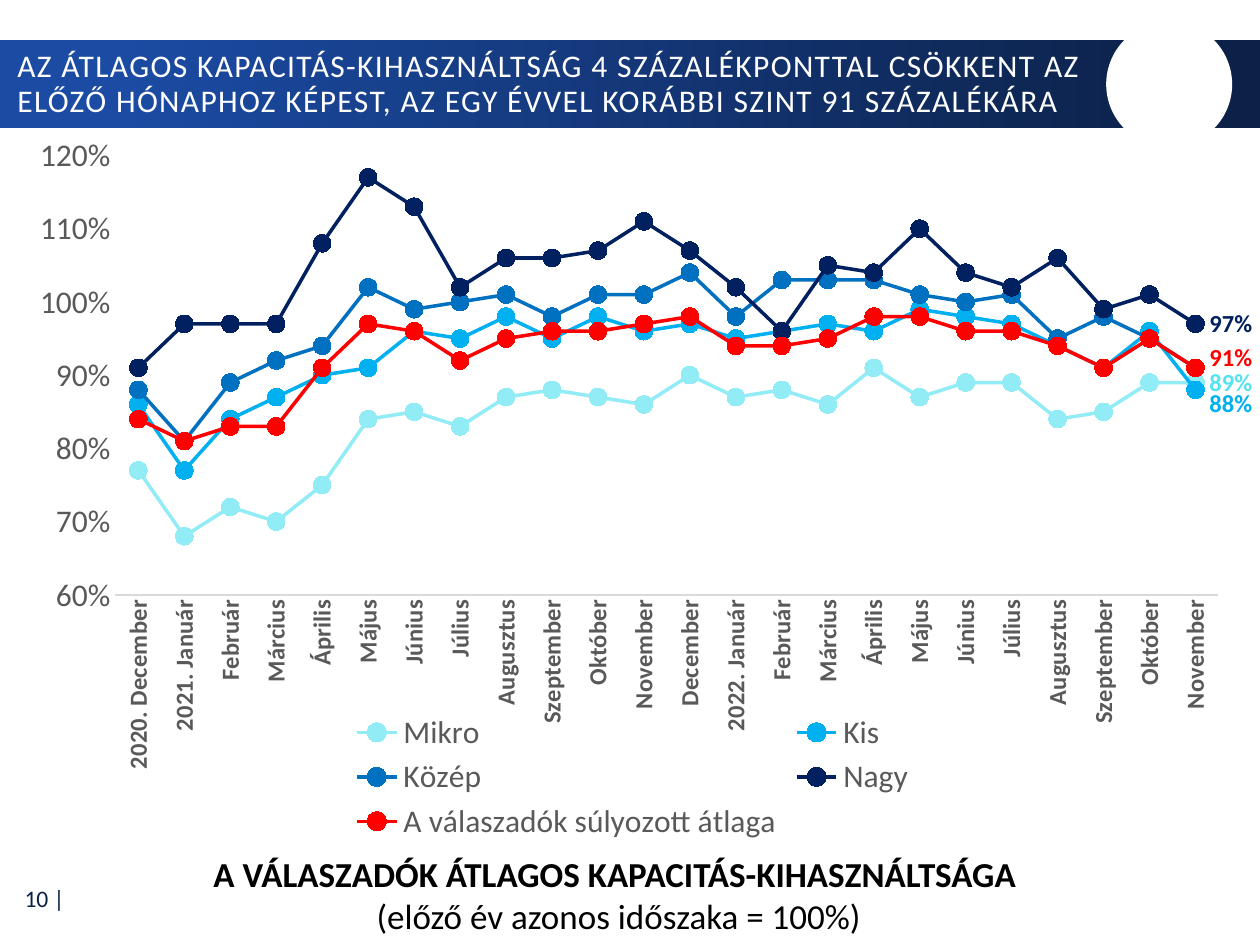
from dataclasses import dataclass

from lxml.etree import SubElement
from pptx import Presentation
from pptx.chart.data import CategoryChartData
from pptx.dml.color import RGBColor
from pptx.enum.chart import (XL_CHART_TYPE, XL_LABEL_POSITION, XL_LEGEND_POSITION,
                             XL_MARKER_STYLE, XL_TICK_MARK)
from pptx.enum.shapes import MSO_SHAPE
from pptx.enum.text import MSO_ANCHOR, PP_ALIGN
from pptx.oxml import parse_xml
from pptx.oxml.ns import nsdecls, qn
from pptx.util import Cm, Pt


@dataclass(frozen=True)
class Theme:
    font: str = "Calibri"
    white: str = "FFFFFF"
    black: str = "000000"
    navy: str = "0C2148"
    blue: str = "1B4BA3"
    grey: str = "595959"
    axis: str = "D9D9D9"
    number_size: float = 13.5
    label_size: float = 14
    text_size: float = 18
    caption_size: float = 20


THEME = Theme()

MONTHS = ["Január", "Február", "Március", "Április", "Május", "Június", "Július",
          "Augusztus", "Szeptember", "Október", "November", "December"]
CATEGORIES = ["2020. December", "2021. Január", *MONTHS[1:], "2022. Január", *MONTHS[1:11]]

# name, line colour, label colour (None: no label), label shift down, percentages
SERIES = [
    ("Mikro", "92ECF6", "55E3F0", 0,
     [77, 68, 72, 70, 75, 84, 85, 83, 87, 88, 87, 86,
      90, 87, 88, 86, 91, 87, 89, 89, 84, 85, 89, 89]),
    ("Kis", "00B0F0", "00B0F0", 0.02,
     [86, 77, 84, 87, 90, 91, 96, 95, 98, 95, 98, 96,
      97, 95, 96, 97, 96, 99, 98, 97, 94, 91, 96, 88]),
    ("Közép", "0070C0", None, 0,
     [88, 81, 89, 92, 94, 102, 99, 100, 101, 98, 101, 101,
      104, 98, 103, 103, 103, 101, 100, 101, 95, 98, 95, 91]),
    ("Nagy", "002060", "002060", 0,
     [91, 97, 97, 97, 108, 117, 113, 102, 106, 106, 107, 111,
      107, 102, 96, 105, 104, 110, 104, 102, 106, 99, 101, 97]),
    ("A válaszadók súlyozott átlaga", "FF0000", "FF0000", -0.014,
     [84, 81, 83, 83, 91, 97, 96, 92, 95, 96, 96, 97,
      98, 94, 94, 95, 98, 98, 96, 96, 94, 91, 95, 91]),
]


def rgb(color):
    return RGBColor.from_string(color)


def style_font(font, size, color, bold=False):
    font.name = THEME.font
    font.size = Pt(size)
    font.color.rgb = rgb(color)
    font.bold = bold


def add_text(slide, box, lines, size, color, align=PP_ALIGN.LEFT, anchor=MSO_ANCHOR.MIDDLE):
    """Add a text box; lines holds (text, bold) pairs, one per paragraph."""
    text_frame = slide.shapes.add_textbox(*map(Cm, box)).text_frame
    text_frame.word_wrap = True
    text_frame.vertical_anchor = anchor
    text_frame.text = "\n".join(text for text, _ in lines)
    for paragraph, (_, bold) in zip(text_frame.paragraphs, lines):
        paragraph.alignment = align
        style_font(paragraph.runs[0].font, size, color, bold)
    return text_frame


def add_plain_shape(slide, kind, box):
    shape = slide.shapes.add_shape(kind, *map(Cm, box))
    shape.shadow.inherit = False
    shape.line.fill.background()
    return shape


def add_banner(slide):
    bar = add_plain_shape(slide, MSO_SHAPE.RECTANGLE, (0, 0.81, 25.4, 1.78))
    bar.fill.gradient()
    bar.fill.gradient_angle = 0
    for stop, position, color in zip(bar.fill.gradient_stops, (0.09, 0.95),
                                     (THEME.blue, THEME.navy)):
        stop.position = position
        stop.color.rgb = rgb(color)
    circle = add_plain_shape(slide, MSO_SHAPE.OVAL, (22.3, 0.43, 2.54, 2.54))
    circle.fill.solid()
    circle.fill.fore_color.rgb = rgb(THEME.white)


def add_title(slide, text):
    text_frame = add_text(slide, (0.1, 0.86, 22.25, 1.7), [(text, False)],
                          THEME.text_size, THEME.white)
    paragraph = text_frame.paragraphs[0]
    paragraph.line_spacing = 0.9
    paragraph.runs[0].font._element.set("spc", "80")


def manual_layout(**values):
    """Return a c:layout element with the given children in order."""
    layout = parse_xml(f"<c:layout {nsdecls('c')}><c:manualLayout/></c:layout>")
    for tag, value in values.items():
        SubElement(layout[0], qn(f"c:{tag}")).set("val", str(value))
    return layout


def label_last_point(series, color, shift):
    label = series.points[len(CATEGORIES) - 1].data_label
    style_font(label.font, THEME.label_size, color, bold=True)
    label.position = XL_LABEL_POSITION.RIGHT
    if shift:
        index = series._element.find(f".//{qn('c:dLbl')}/{qn('c:idx')}")
        index.addnext(manual_layout(x=0, y=shift))


def style_series(series, color):
    series.smooth = False
    series.format.line.color.rgb = rgb(color)
    series.format.line.width = Pt(2)
    series.marker.style = XL_MARKER_STYLE.CIRCLE
    series.marker.size = 10
    series.marker.format.fill.solid()
    series.marker.format.fill.fore_color.rgb = rgb(color)
    series.marker.format.line.color.rgb = rgb(color)


def style_axes(chart):
    months, percent = chart.category_axis, chart.value_axis
    for axis in (months, percent):
        axis.major_tick_mark = axis.minor_tick_mark = XL_TICK_MARK.NONE
        axis.has_major_gridlines = False
    style_font(months.tick_labels.font, THEME.label_size, THEME.grey, bold=True)
    months.format.line.color.rgb = rgb(THEME.axis)
    months.format.line.width = Pt(0.75)
    body = months._element.find(f"{qn('c:txPr')}/{qn('a:bodyPr')}")
    body.set("rot", "-5400000")
    body.set("vert", "horz")

    style_font(percent.tick_labels.font, THEME.text_size, THEME.grey)
    percent.tick_labels.number_format = "0%"
    percent.tick_labels.number_format_is_linked = False
    percent.minimum_scale, percent.maximum_scale, percent.major_unit = 0.6, 1.2, 0.1
    percent.format.line.fill.background()


def add_capacity_chart(slide):
    data = CategoryChartData(number_format="0%")
    data.categories = CATEGORIES
    for name, _, _, _, percentages in SERIES:
        data.add_series(name, [value / 100 for value in percentages])
    chart = slide.shapes.add_chart(XL_CHART_TYPE.LINE_MARKERS, Cm(0.1), Cm(2.57),
                                   Cm(25.3), Cm(14.5), data).chart
    chart.has_title = False
    style_font(chart.font, THEME.text_size, THEME.black)
    chart.plots[0].vary_by_categories = False
    for series, (_, color, label_color, shift, _) in zip(chart.plots[0].series, SERIES):
        style_series(series, color)
        if label_color:
            label_last_point(series, label_color, shift)
    style_axes(chart)

    chart.has_legend = True
    chart.legend.position = XL_LEGEND_POSITION.BOTTOM
    chart.legend.include_in_layout = False
    style_font(chart.legend.font, THEME.text_size, THEME.grey)

    plot_area = chart._chartSpace.find(f".//{qn('c:plotArea')}")
    for layout in plot_area.findall(qn("c:layout")):
        plot_area.remove(layout)
    plot_area.insert(0, manual_layout(layoutTarget="inner", xMode="edge", yMode="edge",
                                      x=0.088, y=0.039, w=0.879, h=0.611))


def main():
    presentation = Presentation()
    presentation.slide_width, presentation.slide_height = Cm(25.4), Cm(19.05)
    slide = presentation.slides.add_slide(presentation.slide_layouts[6])
    add_text(slide, (0.03, 17.63, 1.52, 0.94), [("10 |", False)],
             THEME.number_size, THEME.navy, PP_ALIGN.RIGHT)
    add_banner(slide)
    add_title(slide, "AZ ÁTLAGOS KAPACITÁS-KIHASZNÁLTSÁG 4 SZÁZALÉKPONTTAL CSÖKKENT AZ "
                     "ELŐZŐ HÓNAPHOZ KÉPEST, AZ EGY ÉVVEL KORÁBBI SZINT 91 SZÁZALÉKÁRA")
    add_text(slide, (2.24, 17.07, 20.47, 1.96),
             [("A VÁLASZADÓK ÁTLAGOS KAPACITÁS-KIHASZNÁLTSÁGA ", True),
              ("(előző év azonos időszaka = 100%)", False)],
             THEME.caption_size, THEME.black, PP_ALIGN.CENTER, MSO_ANCHOR.TOP)
    add_capacity_chart(slide)
    presentation.save("out.pptx")


if __name__ == "__main__":
    main()
